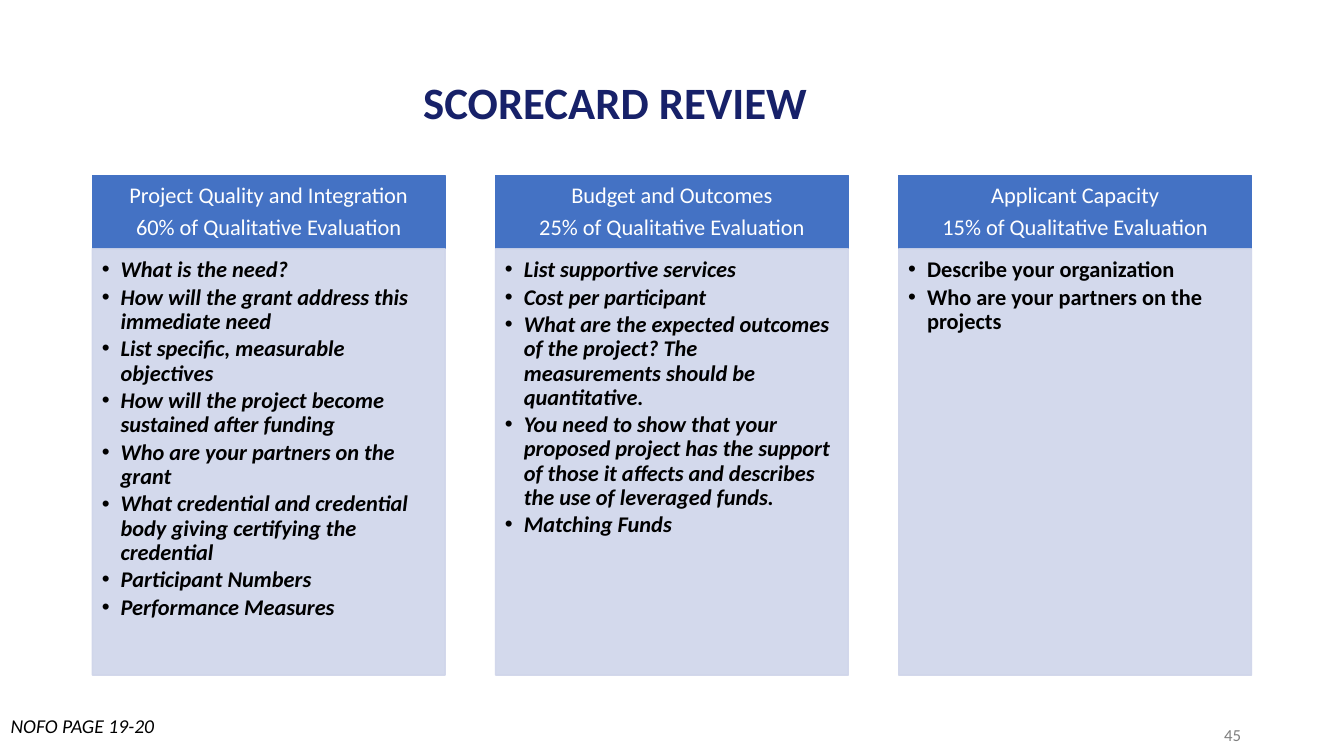
from lxml.etree import SubElement
from pptx import Presentation
from pptx.dml.color import RGBColor
from pptx.enum.shapes import MSO_SHAPE as Preset
from pptx.enum.text import MSO_ANCHOR as Anchor, PP_ALIGN as Align
from pptx.oxml.ns import qn
from pptx.util import Pt

EMU_PER_PX = 9525
HEADER_BLUE = "4472C4"
PANEL_BLUE = "CFD5EA"
COLUMN_LEFT, COLUMN_WIDTH, COLUMN_PITCH = 88, 336, 384
HEADER_TOP, HEADER_HEIGHT, PANEL_HEIGHT = 167, 70, 406
BULLET_INDENT = 18

COLUMNS = [
    (
        ["Project Quality and Integration", "60% of Qualitative Evaluation"],
        [
            "What is the need?",
            "How will the grant address this immediate need",
            "List specific, measurable objectives",
            "How will the project become sustained after funding",
            "Who are your partners on the grant",
            "What credential and credential body giving certifying the credential",
            "Participant Numbers",
            "Performance Measures",
        ],
        True,
    ),
    (
        ["Budget and Outcomes", "25% of Qualitative Evaluation"],
        [
            "List supportive services",
            "Cost per participant",
            "What are the expected outcomes of the project? "
            "The measurements should be quantitative.",
            "You need to show that your proposed project has the support "
            "of those it affects and describes the use of leveraged funds.",
            "Matching Funds",
        ],
        True,
    ),
    (
        ["Applicant Capacity", "15% of Qualitative Evaluation"],
        ["Describe your organization", "Who are your partners on the projects"],
        False,
    ),
]


def px(length):
    return round(length * EMU_PER_PX)


def color(value):
    return RGBColor.from_string(value)


def set_values(target, values):
    for name, value in values.items():
        setattr(target, name, value)


def set_opacity(fill_element, percent):
    alpha = SubElement(fill_element.find(qn("a:srgbClr")), qn("a:alpha"))
    alpha.set("val", str(percent * 1000))


def add_bullet(paragraph):
    properties = paragraph._p.get_or_add_pPr()
    properties.set("marL", str(px(BULLET_INDENT)))
    properties.set("indent", str(-px(BULLET_INDENT)))
    SubElement(properties, qn("a:buFont")).set("typeface", "Arial")
    SubElement(properties, qn("a:buChar")).set("char", "•")


def write(shape, lines, size, text_color, margins=(10, 5, 10, 5), anchor=Anchor.TOP,
          layout=None, font=None, bulleted=False):
    frame = shape.text_frame
    left, top, right, bottom = (px(margin) for margin in margins)
    set_values(frame, {
        "word_wrap": True, "vertical_anchor": anchor,
        "margin_left": left, "margin_top": top,
        "margin_right": right, "margin_bottom": bottom,
    })
    for index, line in enumerate(lines):
        paragraph = frame.add_paragraph() if index else frame.paragraphs[0]
        set_values(paragraph, {"alignment": Align.LEFT, **(layout or {})})
        if bulleted:
            add_bullet(paragraph)
        run = paragraph.add_run()
        run.text = line
        set_values(run.font, {"name": "Calibri", "size": Pt(size), **(font or {})})
        run.font.color.rgb = color(text_color)


def add_label(slide, box, text, size, text_color, **options):
    shape = slide.shapes.add_textbox(*(px(length) for length in box))
    write(shape, [text], size, text_color, **options)


def add_block(slide, box, fill_color, opacity=100):
    shape = slide.shapes.add_shape(Preset.RECTANGLE, *(px(length) for length in box))
    shape.shadow.inherit = False
    shape.line.width = Pt(1)
    for fill in (shape.fill, shape.line.fill):
        fill.solid()
        fill.fore_color.rgb = color(fill_color)
    if opacity < 100:
        for element in list(shape._element.spPr.iter(qn("a:solidFill"))):
            set_opacity(element, opacity)
    return shape


def add_column(slide, left, heading, questions, italic):
    header = add_block(slide, (left, HEADER_TOP, COLUMN_WIDTH, HEADER_HEIGHT), HEADER_BLUE)
    write(header, heading, 16, "FFFFFF", margins=(12, 7, 12, 7), anchor=Anchor.MIDDLE,
          layout={"alignment": Align.CENTER, "line_spacing": 0.9, "space_after": Pt(5.6)})
    panel_box = (left, HEADER_TOP + HEADER_HEIGHT, COLUMN_WIDTH, PANEL_HEIGHT)
    panel = add_block(slide, panel_box, PANEL_BLUE, opacity=90)
    write(panel, questions, 16, "000000", margins=(9, 9, 12, 13), bulleted=True,
          layout={"line_spacing": 0.9, "space_after": Pt(2.4)},
          font={"bold": True, "italic": italic})


def main():
    presentation = Presentation()
    set_values(presentation, {"slide_width": px(1280), "slide_height": px(720)})
    slide = presentation.slides.add_slide(presentation.slide_layouts[6])
    add_label(slide, (393, 70, 800, 59), "SCORECARD REVIEW", 32, "172169",
              anchor=Anchor.MIDDLE, layout={"line_spacing": 0.9}, font={"bold": True})
    for index, (heading, questions, italic) in enumerate(COLUMNS):
        add_column(slide, COLUMN_LEFT + index * COLUMN_PITCH, heading, questions, italic)
    add_label(slide, (904, 681, 288, 38), "45", 12, "808080",
              anchor=Anchor.MIDDLE, layout={"alignment": Align.RIGHT})
    add_label(slide, (0, 675, 186, 33), "NOFO PAGE 19-20", 14, "000000",
              font={"italic": True})
    presentation.save("out.pptx")


if __name__ == "__main__":
    main()
